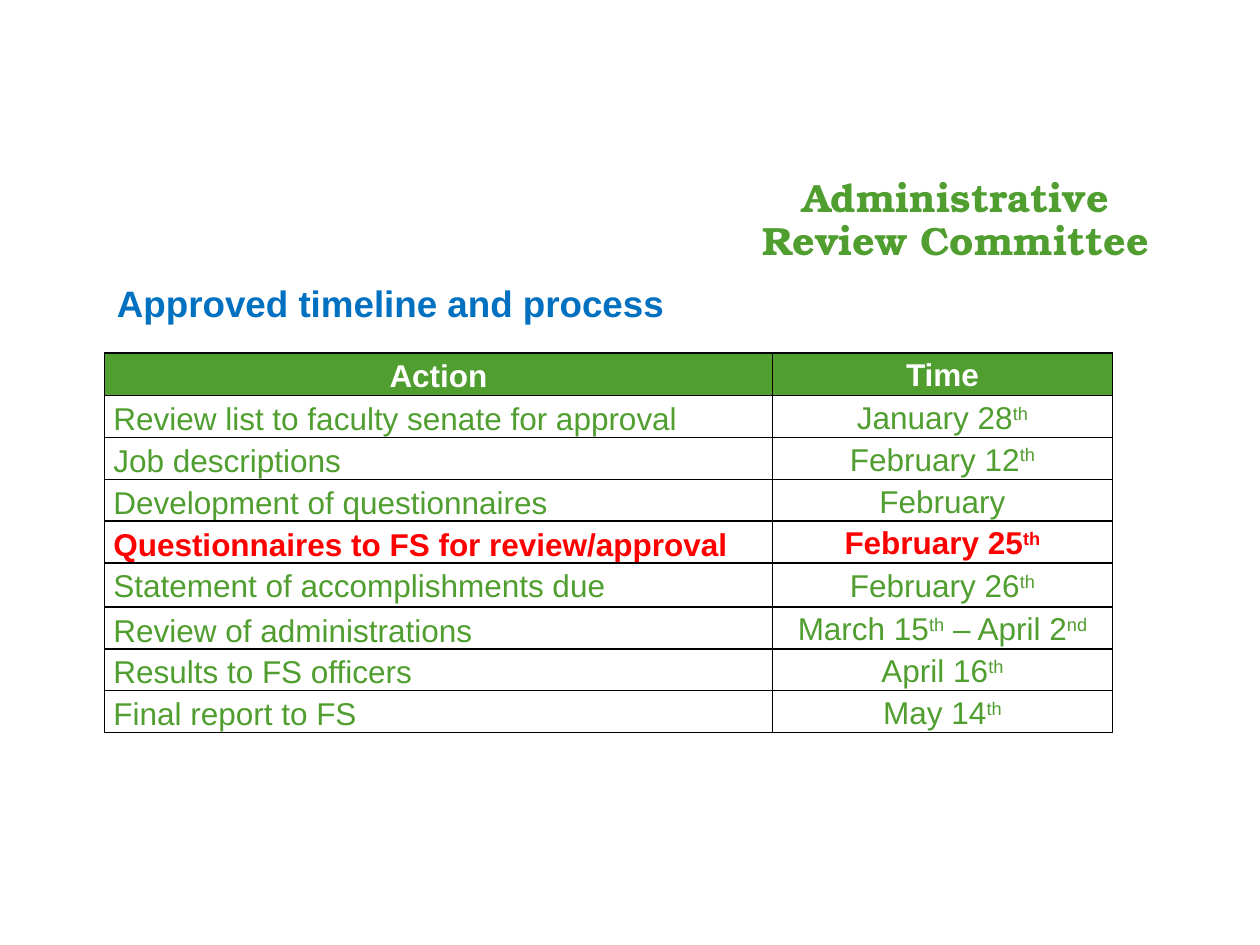
import pptx
import pptx.dml.color
import pptx.enum.text
import pptx.oxml
import pptx.oxml.ns
import pptx.util

THEME = {
    "green": "509E2F", "blue": "0070C0", "red": "FF0000",
    "white": "FFFFFF", "black": "000000",
    "sans": "Arial", "serif": "TeX Gyre Bonum",
    "title": 22.5, "subtitle": 21, "table": 18, "border": 1,
}
CENTER = pptx.enum.text.PP_ALIGN.CENTER
LEFT = pptx.enum.text.PP_ALIGN.LEFT


def write_text(text_frame, text, size, color, font=THEME["sans"], bold=False,
               align=LEFT, spacing=1.0):
    paragraph = text_frame.paragraphs[0]
    paragraph.alignment = align
    paragraph.line_spacing = spacing
    paragraph.space_before = pptx.util.Pt(0)
    for index, part in enumerate(text.split("^")):
        run = paragraph.add_run()
        run.text = part
        run.font.name = font
        run.font.size = pptx.util.Pt(size)
        run.font.bold = bold
        run.font.color.rgb = pptx.dml.color.RGBColor.from_string(color)
        if index % 2:
            run.font._element.set("baseline", "30000")


presentation = pptx.Presentation()
presentation.slide_width = pptx.util.Inches(10)
presentation.slide_height = pptx.util.Inches(7.5)
slide = presentation.slides.add_slide(presentation.slide_layouts[5])
inches = pptx.util.Inches
left_margin = inches(0.83)

title = slide.shapes.title
title.left, title.top = inches(5.77), inches(1.37)
title.width, title.height = inches(3.63), inches(0.79)
subtitle = slide.shapes.add_textbox(left_margin, inches(2.16), inches(4.9), inches(0.32))
for shape, inset in ((title, 0.05), (subtitle, 0.07)):
    frame = shape.text_frame
    frame.word_wrap = True
    frame.auto_size = pptx.enum.text.MSO_AUTO_SIZE.NONE
    frame.vertical_anchor = pptx.enum.text.MSO_ANCHOR.TOP
    frame.margin_left = frame.margin_right = inches(0.1)
    frame.margin_top = frame.margin_bottom = inches(inset)
write_text(title.text_frame, "Administrative Review Committee", THEME["title"],
           THEME["green"], font=THEME["serif"], bold=True, align=CENTER, spacing=0.9)
write_text(subtitle.text_frame, "Approved timeline and process", THEME["subtitle"],
           THEME["blue"], bold=True)

timeline = [
    ("Action", "Time"),
    ("Review list to faculty senate for approval", "January 28^th"),
    ("Job descriptions", "February 12^th"),
    ("Development of questionnaires", "February"),
    ("Questionnaires to FS for review/approval", "February 25^th"),
    ("Statement of accomplishments due", "February 26^th"),
    ("Review of administrations", "March 15^th^ – April 2^nd"),
    ("Results to FS officers", "April 16^th"),
    ("Final report to FS", "May 14^th"),
]
header_row, urgent_row, tall_row = 0, 4, 5
column_widths = (5.3, 2.7)
row_heights = [0.33] * len(timeline)
row_heights[header_row], row_heights[tall_row] = 0.34, 0.35

table = slide.shapes.add_table(
    len(timeline), len(column_widths), left_margin, inches(2.8),
    inches(sum(column_widths)), inches(sum(row_heights))).table
table.horz_banding = False
for column, width in zip(table.columns, column_widths):
    column.width = inches(width)

for row_index, entries in enumerate(timeline):
    table.rows[row_index].height = inches(row_heights[row_index])
    is_header = row_index == header_row
    is_urgent = row_index == urgent_row
    text_color = THEME["white" if is_header else "red" if is_urgent else "green"]
    fill_color = THEME["green" if is_header else "white"]
    for column_index, text in enumerate(entries):
        cell = table.cell(row_index, column_index)
        padded = column_index == 0 or row_index == tall_row
        cell.margin_left = cell.margin_right = inches(0.07 if padded else 0)
        cell.margin_top = inches(0.01 if padded else 0)
        cell.margin_bottom = 0
        cell.vertical_anchor = pptx.enum.text.MSO_ANCHOR.TOP
        properties = cell._tc.get_or_add_tcPr()
        for side in ("lnL", "lnR", "lnT", "lnB"):
            properties.append(pptx.oxml.parse_xml(
                f'<a:{side} {pptx.oxml.ns.nsdecls("a")} w="{pptx.util.Pt(THEME["border"])}">'
                f'<a:solidFill><a:srgbClr val="{THEME["black"]}"/></a:solidFill></a:{side}>'))
        cell.fill.solid()
        cell.fill.fore_color.rgb = pptx.dml.color.RGBColor.from_string(fill_color)
        write_text(cell.text_frame, text, THEME["table"], text_color,
                   bold=is_header or is_urgent, spacing=1.15,
                   align=CENTER if is_header or column_index else LEFT)

presentation.save("out.pptx")
